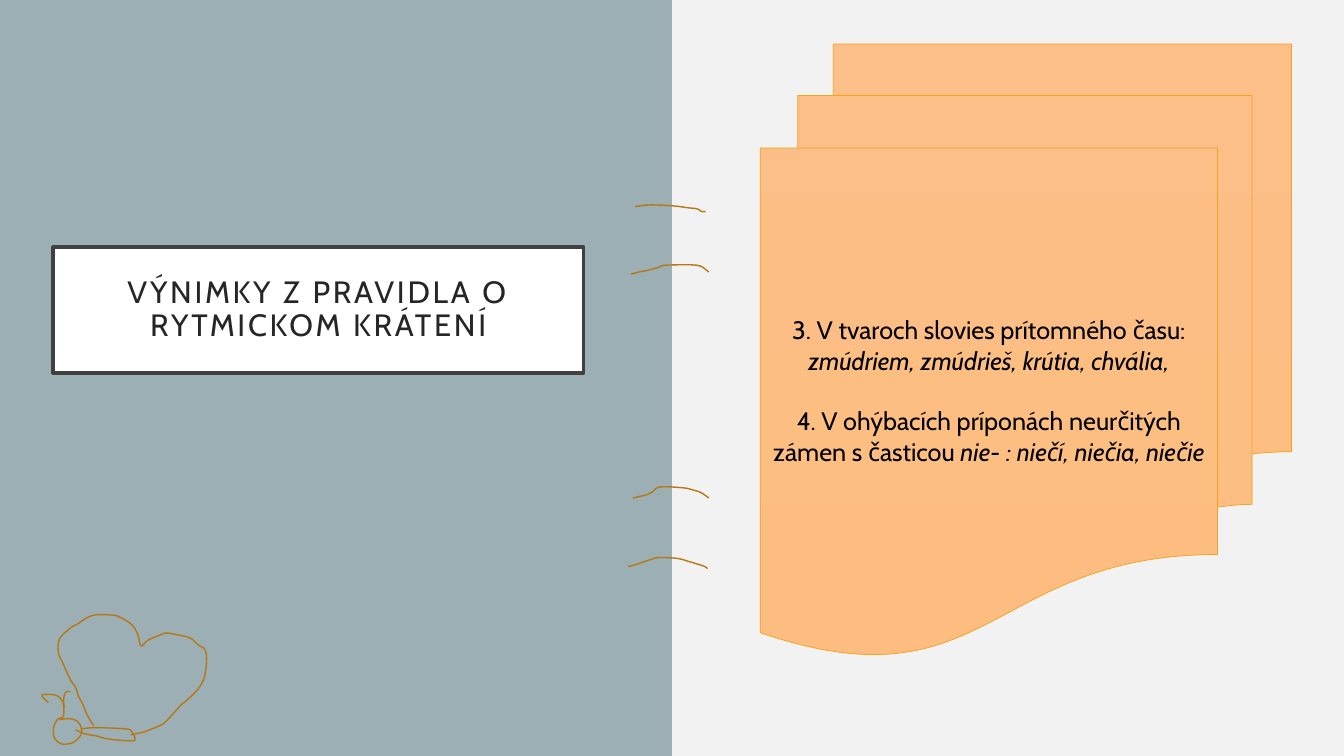
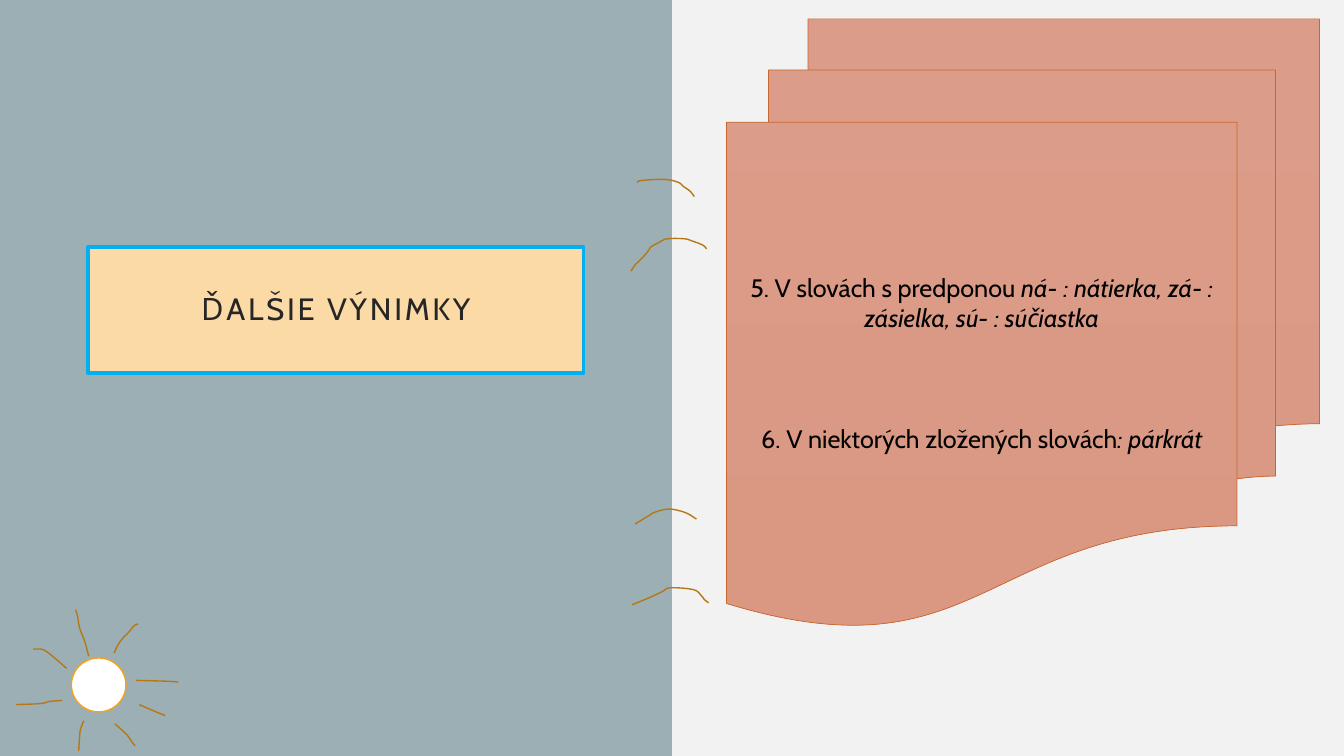
import pptx
import pptx.util
import pptx.dml.color
import pptx.enum.shapes
import pptx.enum.text
import pptx.oxml.ns

Pt = pptx.util.Pt
KIND = pptx.enum.shapes.MSO_SHAPE
ALIGN = pptx.enum.text.PP_ALIGN
ANCHOR = pptx.enum.text.MSO_ANCHOR

FONT = "Cabin"
WIDE, HIGH = 960, 540
PAPER, PANEL = "F2F2F2", "9BAFB5"
INK, BLACK, WHITE = "262626", "000000", "FFFFFF"
BROWN, AMBER = "B67815", "F6A21D"

RINGS_A = [
    [(5.6, 1.6), (16, 0.4), (32, 1), (44, 2.5), (50, 3.2), (53, 5), (56, 5.2)],
    [(2.7, 49.8), (7.8, 48.4), (15, 47), (22.9, 44.8), (27.9, 43.4),
     (49.5, 43.4), (56.7, 47), (58.2, 48.4)],
    [(4.2, 209.7), (13.5, 207.5), (17.8, 205.4), (23.6, 201.8), (40.2, 202.5),
     (46.6, 203.9), (51.7, 205.4), (55.3, 207.5), (58.2, 209.7)],
    [(0.6, 258.6), (4.2, 257.9), (10.6, 255.8), (17.1, 253.6), (22.9, 252.2),
     (35.8, 252.9), (43.8, 255), (51, 257.2), (55.3, 258.6), (57.4, 260.1)],
]
RINGS_B = [
    [(5, 2.3), (8.6, 0.9), (25, 0.2), (34.6, 2.3), (38.2, 5.2), (40.3, 6.6),
     (43.2, 8.8), (46, 12.4)],
    [(0.7, 65.7), (3.6, 61.4), (6.5, 58.5), (10, 54.9), (13, 51.3), (15, 48.4),
     (20.2, 45.5), (26.6, 42.6), (38.9, 42.6), (43.9, 44), (51.8, 47),
     (54.7, 49.8)],
    [(3.6, 246.4), (13, 240.6), (18, 237.8), (27.4, 235.6), (36, 237),
     (41.8, 239.2), (45.4, 241.4), (47.5, 242.8)],
    [(1.4, 304), (13.7, 299), (23, 294.6), (28.8, 291.8), (45.4, 293.2),
     (51, 297.5), (53.3, 300.4), (56.2, 302.6)],
]
FEELER = [(4.6, 63.8), (0.2, 59.5), (1.7, 58.1), (10.3, 58.8), (14.6, 63.1),
          (16, 67.4)]
BODY = [(28.3, 82.6), (38.4, 81.8), (58.6, 82.6), (63.6, 84), (66.5, 89.8),
        (62.9, 91.2), (47, 89.8), (38.4, 87.6), (30.5, 86.2), (24, 83.3)]
WINGS = [
    (37, 80.4), (32.6, 73.2), (29, 64.6), (26.2, 59.5), (24, 53), (21, 48.7),
    (18.2, 43), (14.6, 35), (11.8, 28.6), (12.5, 18.5), (20.4, 10.6),
    (25.4, 7.7), (32, 3.4), (38.4, 1.2), (47.8, 1.2), (53.5, 1.9), (59.3, 4.8),
    (65, 9.1), (68.6, 15.6), (70.8, 23.5), (75.8, 19.2), (84.5, 15.6),
    (88.8, 14.2), (97.4, 15.6), (106, 17.8), (111.8, 22.8), (116.2, 25.7),
    (117.6, 32.2), (116.2, 45), (111.8, 53.8), (104, 61.7), (98.9, 66),
    (92.4, 73.2), (86.6, 79), (78.7, 82.6), (73, 84.7), (63.6, 86.9),
]
HEAD = [(20.4, 56), (16.8, 56.6), (15.4, 62.4), (15.4, 73.2), (11, 76),
        (8.2, 82), (8.9, 89), (13.9, 93.4), (21.8, 92.6), (26.9, 88.3),
        (28.3, 84), (26.2, 78.2), (20.4, 75.4), (12.5, 76)]
RAYS = [
    [(51.4, 32.7), (48.5, 22), (44.9, 12.6), (43.4, 4), (42, -0.4)],
    [(35.5, 41.4), (29, 35.6), (21.8, 29.8), (17.5, 27.7), (11.8, 27.7)],
    [(32.6, 64.4), (24, 65), (16.8, 66.6), (-0.5, 67.3)],
    [(47.8, 78.8), (45.6, 84.6), (44.9, 89.6), (44.2, 100.4)],
    [(70, 81), (75, 85.3), (78.7, 88.9), (82.3, 94), (84.5, 96.8)],
    [(69.4, 30.6), (72.2, 24.8), (75.8, 19.8), (79.4, 16.2), (83.8, 11),
     (86.6, 9.7)],
    [(85.2, 50), (109.7, 50.7), (115.4, 51.4)],
    [(87.4, 67.3), (97.4, 71.6), (106, 75.2)],
]


def rgb(code):
    return pptx.dml.color.RGBColor.from_string(code)


def outline(shape, color, width):
    shape.shadow.inherit = False
    if color:
        shape.line.color.rgb = rgb(color)
        shape.line.width = Pt(width)
    else:
        shape.line.fill.background()


def block(slide, kind, box, fill, line=None, width=1):
    """Add a preset shape; two fill colours make a vertical gradient."""
    shape = slide.shapes.add_shape(kind, *map(Pt, box))
    outline(shape, line, width)
    if isinstance(fill, str):
        shape.fill.solid()
        shape.fill.fore_color.rgb = rgb(fill)
    else:
        shape.fill.gradient()
        shape.fill.gradient_angle = 270
        for stop, color in zip(shape.fill.gradient_stops, fill):
            stop.color.rgb = rgb(color)
    return shape


def style(run, size, color, slant=False):
    font = run.font
    font.name, font.size, font.italic = FONT, Pt(size), slant
    font.color.rgb = rgb(color)


def title(slide, box, text, fill, line):
    shape = block(slide, KIND.RECTANGLE, box, fill, line, 2.5)
    frame = shape.text_frame
    frame.text = text
    frame.word_wrap = True
    frame.vertical_anchor = ANCHOR.MIDDLE
    frame.margin_left = frame.margin_right = Pt(14.4)
    frame.margin_top = frame.margin_bottom = Pt(14.4)
    para = frame.paragraphs[0]
    para.alignment = ALIGN.CENTER
    para.line_spacing = 0.9
    style(para.runs[0], 22, INK)
    for props in shape.element.iter(pptx.oxml.ns.qn("a:rPr")):
        props.set("spc", "200")


def pages(slide, box, rules, gap, fill, line):
    """Add the stack of sheets; each rule is a plain and a slanted part."""
    shape = block(slide, KIND.FLOWCHART_MULTIDOCUMENT, box, fill, line, 0.5)
    frame = shape.text_frame
    frame.word_wrap = True
    frame.vertical_anchor = ANCHOR.MIDDLE
    for i, parts in enumerate(rules):
        para = frame.add_paragraph() if i else frame.paragraphs[0]
        para.alignment = ALIGN.CENTER
        para.space_before = Pt(gap if i else 0)
        for part, slant in zip(parts, (False, True)):
            run = para.add_run()
            run.text = part
            style(run, 18, BLACK, slant)


def smooth(points, steps=4):
    """Return points on a Catmull-Rom curve through the given points."""
    ends = [points[0], *points, points[-1]]
    curve = [points[0]]
    for a, b, c, d in zip(ends, ends[1:], ends[2:], ends[3:]):
        for n in range(1, steps + 1):
            t = n / steps
            curve.append(tuple(
                q + t / 2 * (r - p + t * (2 * p - 5 * q + 4 * r - s
                                          + t * (3 * q - p - 3 * r + s)))
                for p, q, r, s in zip(a, b, c, d)))
    return curve


def sketch(slide, left, top, strokes):
    for stroke in strokes:
        curve = [(Pt(left + x), Pt(top + y)) for x, y in smooth(stroke)]
        pen = slide.shapes.build_freeform(*curve[0])
        pen.add_line_segments(curve[1:], close=False)
        shape = pen.convert_to_shape()
        shape.fill.background()
        outline(shape, BROWN, 1)


def heart(slide, left, top):
    sketch(slide, left, top, [FEELER, BODY, WINGS, HEAD])


def sun(slide, left, top):
    box = (left + 39, top + 34, 39, 38.5)
    block(slide, KIND.FLOWCHART_CONNECTOR, box, WHITE, AMBER)
    sketch(slide, left, top, RAYS)


def base(deck):
    slide = deck.slides.add_slide(deck.slide_layouts[6])
    block(slide, KIND.RECTANGLE, (0, 0, WIDE / 2, HIGH), PANEL)
    return slide


def main():
    deck = pptx.Presentation()
    deck.slide_width, deck.slide_height = Pt(WIDE), Pt(HIGH)
    back = deck.slide_master.background.fill
    back.solid()
    back.fore_color.rgb = rgb(PAPER)

    slide = base(deck)
    title(slide, (38, 176.5, 379, 90), "VÝNIMKY Z PRAVIDLA O RYTMICKOM KRÁTENÍ",
          WHITE, "404040")
    pages(slide, (543, 31.5, 379.5, 437), [
        ("3. V tvaroch slovies prítomného času: ",
         "zmúdriem, zmúdrieš, krútia, chvália,"),
        ("4. V ohýbacích príponách neurčitých zámen s časticou ",
         "nie- : niečí, niečia, niečie"),
    ], 21.7, ("FCBF87", "FDBD80"), AMBER)
    sketch(slide, 448, 146, RINGS_A)
    heart(slide, 30, 438)

    slide = base(deck)
    title(slide, (63, 176.5, 354, 90), "ĎALŠIE VÝNIMKY", "FBDAA5", "00B0F0")
    pages(slide, (519, 13.5, 423.5, 434), [
        ("5. V slovách s predponou ",
         "ná- : nátierka, zá- : zásielka, sú- : súčiastka"),
        ("6. V niektorých zložených slovách", ": párkrát"),
    ], 65, ("DB9C89", "DA9882"), "C96731")
    sketch(slide, 450, 128, RINGS_B)
    sun(slide, 12, 436)

    deck.save("out.pptx")


if __name__ == "__main__":
    main()
